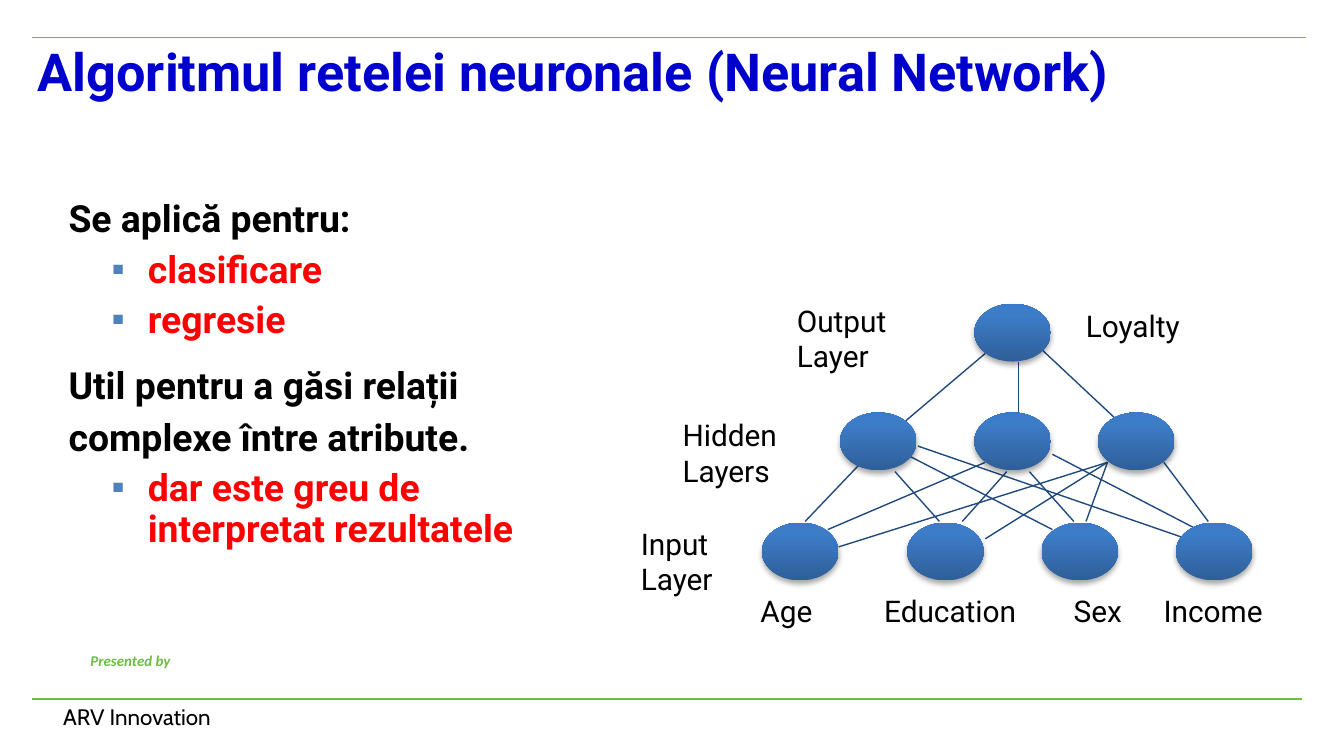
from lxml import etree
from pptx import Presentation
from pptx.dml.color import RGBColor
from pptx.enum import shapes as sh, text as tx
from pptx.oxml import parse_xml
from pptx.oxml.ns import qn
from pptx.util import Pt

NS = 'xmlns:a="http://schemas.openxmlformats.org/drawingml/2006/main"'
GREEN, NAVY, BLUE, RED, BLACK = "6BBD46", "1F497D", "0000CC", "FF0000", "000000"
STOPS = [(0, "2F5F99"), (80, "3D7CC7"), (100, "3A7CCB")]

# Network: top of each row, then the left edge of each neuron
WIDE, HIGH = 41, 31
ROWS = [(162.7, [522]), (221, [450, 522, 588.2]), (280, [408.2, 486, 558, 630])]
EDGES = [
    # hidden to output
    (485.3, 225.4, 527.8, 189.4), (545.8, 221, 545.8, 193.7),
    (603.4, 229.7, 558, 187.2),
    # input to hidden
    (431.3, 279.4, 461.5, 247.7), (443.5, 283.7, 527.8, 247.7),
    (449.3, 293, 593.3, 247.7), (503.3, 279.4, 479.5, 252.7),
    (515.5, 279.4, 539.3, 252.7), (527.8, 288.7, 593.3, 247.7),
    (563.8, 283.7, 485.3, 243.4), (575.3, 279.4, 551.5, 252.7),
    (581.8, 279.4, 593.3, 247.7), (635.8, 288.7, 491.8, 239),
    (641.5, 283.7, 563.8, 243.4), (647.3, 279.4, 623.5, 247.7),
]
# Text, left, top, width, height, wrap
LABELS = [
    ("Age", 400.3, 313.9, 43.2, 26.6, False),
    ("Education", 466.6, 313.9, 86.4, 26.6, False),
    ("Sex", 568.1, 313.9, 42.5, 26.6, False),
    ("Income", 616.3, 313.9, 67.7, 26.6, False),
    ("Loyalty", 574.6, 161.3, 65.5, 26.6, False),
    ("Input Layer", 336.2, 277.9, 66.2, 46.1, True),
    ("Hidden\nLayers", 358.6, 219.6, 69.8, 46.1, False),
    ("Output Layer", 419.8, 158.4, 92.2, 46.1, True),
]
# Text, is a bullet
POINTS = [
    ("Se aplică pentru:", False), ("clasificare", True), ("regresie", True),
    ("Util pentru a găsi relații complexe între atribute.", False),
    ("dar este greu de interpretat rezultatele", True),
]


def color(code):
    return RGBColor.from_string(code)


def write(par, words, size=16, face="Roboto", hue=BLACK, bold=False, slant=False):
    run = par.add_run()
    run.text = words
    font = run.font
    font.size, font.name = Pt(size), face
    font.bold, font.italic = bold, slant
    font.color.rgb = color(hue)


def place(shape, x, y, w, h):
    shape.left, shape.top, shape.width, shape.height = map(Pt, (x, y, w, h))


def inset(frame, side=0, top=0):
    frame.margin_left = frame.margin_right = Pt(side)
    frame.margin_top = frame.margin_bottom = Pt(top)
    frame.vertical_anchor = tx.MSO_ANCHOR.TOP


def label(slide, words, x, y, w, h, wrap=False, side=7.2, top=3.6, align=None, **style):
    frame = slide.shapes.add_textbox(*map(Pt, (x, y, w, h))).text_frame
    inset(frame, side, top)
    frame.word_wrap = wrap
    frame.auto_size = tx.MSO_AUTO_SIZE.SHAPE_TO_FIT_TEXT
    for i, part in enumerate(words.split("\n")):
        par = frame.add_paragraph() if i else frame.paragraphs[0]
        par.alignment = align or tx.PP_ALIGN.LEFT
        write(par, part, **style)


def line(slide, ends, hue, width=0.75):
    link = slide.shapes.add_connector(sh.MSO_CONNECTOR.STRAIGHT, *map(Pt, ends))
    link.line.color.rgb, link.line.width = color(hue), Pt(width)
    etree.SubElement(link._element.spPr, qn("a:effectLst"))


def neuron(slide, x, y):
    node = slide.shapes.add_shape(sh.MSO_SHAPE.OVAL, *map(Pt, (x, y, WIDE, HIGH)))
    node.line.fill.background()
    node.shadow.inherit = False
    props = node._element.spPr
    # Gradient that runs from the bottom up
    stops = "".join(f'<a:gs pos="{at * 1000}"><a:srgbClr val="{hue}"/></a:gs>'
                    for at, hue in STOPS)
    fill = parse_xml(f'<a:gradFill {NS} rotWithShape="1"><a:gsLst>{stops}</a:gsLst>'
                     '<a:lin ang="16200000" scaled="0"/></a:gradFill>')
    props.find(qn("a:prstGeom")).addnext(fill)
    # Soft shadow straight below
    props.find(qn("a:effectLst")).append(parse_xml(
        f'<a:outerShdw {NS} blurRad="{Pt(3.1)}" dist="{Pt(1.8)}" dir="5400000" '
        'rotWithShape="0"><a:srgbClr val="000000"><a:alpha val="35000"/>'
        '</a:srgbClr></a:outerShdw>'))


def point(par, words, mark, first):
    props = par._p.get_or_add_pPr()
    left, hang = (42.5, -19.4) if mark else (0, 0)
    props.set("marL", str(Pt(left)))
    props.set("indent", str(Pt(hang)))
    if mark:
        par.level = 1
        tint = etree.SubElement(props, qn("a:buClr"))
        etree.SubElement(tint, qn("a:srgbClr")).set("val", "4F81BD")
        etree.SubElement(props, qn("a:buChar")).set("char", "▪")
    else:
        etree.SubElement(props, qn("a:buNone"))
    par.alignment = tx.PP_ALIGN.LEFT
    par.line_spacing = Pt(22 if mark else 28)
    par.space_before = Pt(0 if first else 5 if mark else 7)
    write(par, words, size=20, hue=RED if mark else BLACK, bold=True)


def main():
    deck = Presentation()
    deck.slide_width, deck.slide_height = Pt(720), Pt(405)
    slide = deck.slides.add_slide(deck.slide_layouts[1])
    title, body = slide.placeholders

    # Rules and footer
    line(slide, (17.3, 20.2, 699.8, 20.2), GREEN)
    line(slide, (17.3, 374.4, 697.7, 374.4), GREEN, 1)
    label(slide, "ARV Innovation", 33.8, 376.6, 85, 14.4, side=0, top=0,
          size=12, face="Cabin")
    label(slide, "Presented by", 41, 345.6, 57.6, 16.6, align=tx.PP_ALIGN.RIGHT,
          size=8, face="Calibri", hue=GREEN, bold=True, slant=True)

    # Title and list
    place(title, 20.2, 20.9, 677.5, 35.3)
    place(body, 36.7, 100.8, 288, 249.1)
    for box in (title, body):
        inset(box.text_frame)
        box.text_frame.auto_size = tx.MSO_AUTO_SIZE.NONE
    head = title.text_frame.paragraphs[0]
    head.alignment = tx.PP_ALIGN.LEFT
    write(head, "Algoritmul retelei neuronale (Neural Network)",
          size=28, hue=BLUE, bold=True)
    frame = body.text_frame
    for i, (words, mark) in enumerate(POINTS):
        par = frame.add_paragraph() if i else frame.paragraphs[0]
        point(par, words, mark, i == 0)

    # Network
    for ends in EDGES:
        line(slide, ends, NAVY)
    for item in LABELS:
        label(slide, *item)
    for y, lefts in ROWS:
        for x in lefts:
            neuron(slide, x, y)

    deck.save("out.pptx")


if __name__ == "__main__":
    main()
